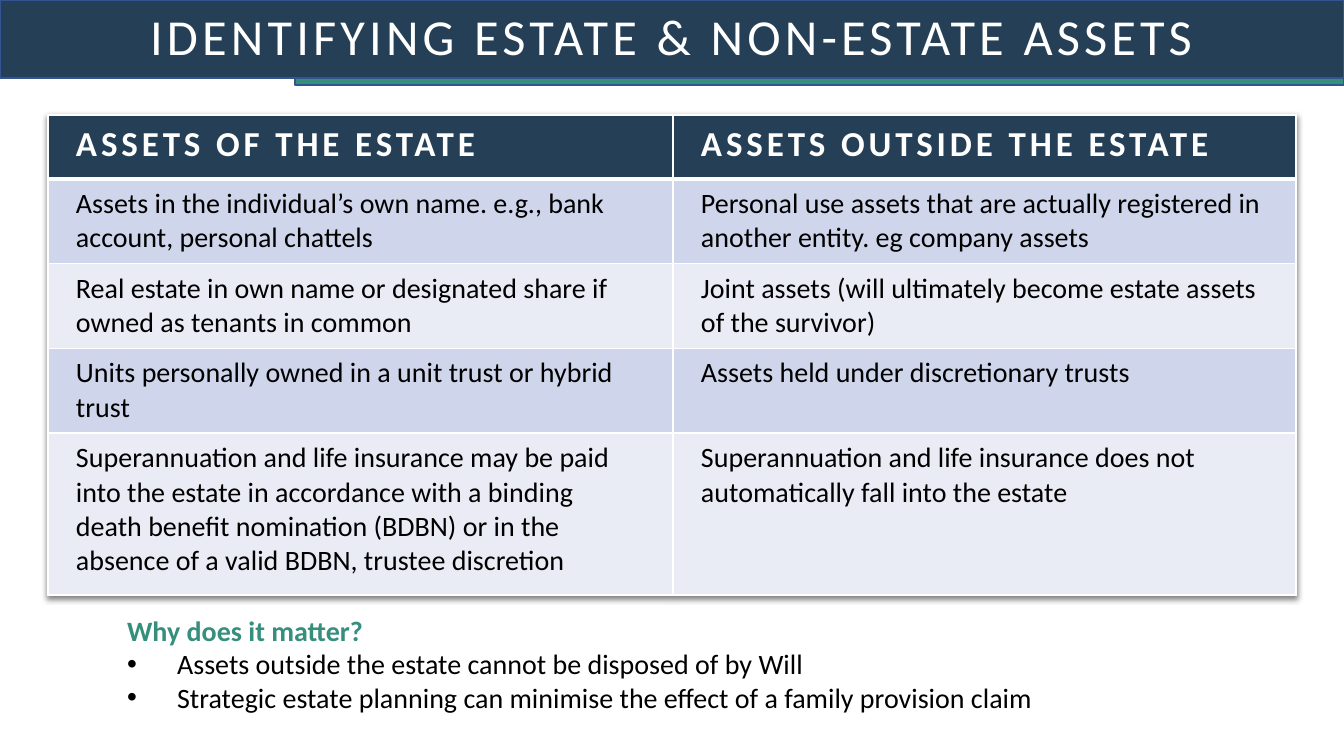
"""Build the slide on estate and non-estate assets."""
from lxml.etree import SubElement
from pptx import Presentation
from pptx.dml.color import RGBColor
from pptx.enum.shapes import MSO_SHAPE as Shape
from pptx.enum.text import MSO_ANCHOR as Anchor, MSO_AUTO_SIZE as AutoSize, PP_ALIGN as Align
from pptx.oxml import parse_xml
from pptx.oxml.ns import nsdecls, qn
from pptx.util import Pt

EMU_PER_PX = 914400 / 100.8
NAVY, GREEN, BLUE = "254056", "368E7D", "325491"
WHITE, BLACK = "FFFFFF", "000000"
BANDS = ("CFD5EA", "E9EBF5")
COLUMNS = (625, 623)
ROWS = (64, 84, 84, 85, 162)
ASSETS = (
    ("ASSETS OF THE ESTATE", "ASSETS OUTSIDE THE ESTATE"),
    ("Assets in the individual’s own name. e.g., bank account, personal chattels",
     "Personal use assets that are actually registered in another entity. eg company assets"),
    ("Real estate in own name or designated share if owned as tenants in common",
     "Joint assets (will ultimately become estate assets of the survivor)"),
    ("Units personally owned in a unit trust or hybrid trust",
     "Assets held under discretionary trusts"),
    ("Superannuation and life insurance may be paid into the estate in accordance with a "
     "binding death benefit nomination (BDBN) or in the absence of a valid BDBN, trustee discretion",
     "Superannuation and life insurance does not automatically fall into the estate"),
)
REASONS = (
    "Assets outside the estate cannot be disposed of by Will",
    "Strategic estate planning can minimise the effect of a family provision claim",
)


def px(length):
    """Turn pixels into EMU."""
    return round(length * EMU_PER_PX)


def color(value):
    """Turn a hex string into a colour."""
    return RGBColor.from_string(value)


def set_format(target, values):
    """Set each attribute of the target from a dict."""
    for name, value in values.items():
        setattr(target, name, value)


def place(shape, left, top, width, height):
    """Move and size a shape in pixels."""
    set_format(shape, {"left": px(left), "top": px(top),
                       "width": px(width), "height": px(height)})


def write(para, text, size, ink, bold=False, tracking=0):
    """Add one formatted run to a paragraph."""
    span = para.add_run()
    span.text = text
    set_format(span.font, {"name": "Calibri", "size": Pt(size), "bold": bold})
    span.font.color.rgb = color(ink)
    span.font._element.set("spc", str(round(tracking * 100)))


def add_bar(page, left, top, width, height, fill):
    """Add an outlined bar behind the placeholders."""
    bar = page.shapes.add_shape(Shape.RECTANGLE, px(left), px(top), px(width), px(height))
    bar.shadow.inherit = False
    bar.fill.solid()
    bar.fill.fore_color.rgb = color(fill)
    bar.line.color.rgb = color(BLUE)
    bar.line.width = Pt(1)
    page.shapes._spTree.insert(2, bar._element)


def fill_title(title):
    """Place and write the slide title."""
    place(title, 0, 0, 1344, 78)
    set_format(title.text_frame, {"vertical_anchor": Anchor.MIDDLE, "word_wrap": True,
                                  "auto_size": AutoSize.NONE})
    para = title.text_frame.paragraphs[0]
    set_format(para, {"alignment": Align.CENTER, "line_spacing": 0.9})
    write(para, "IDENTIFYING ESTATE & NON-ESTATE ASSETS", 36, WHITE, tracking=3)


def fill_reasons(body):
    """Write the heading and the bullets under the table."""
    place(body, 117, 608, 1159, 112)
    frame = body.text_frame
    set_format(frame, {"auto_size": AutoSize.NONE, "word_wrap": True})
    for index, text in enumerate(("Why does it matter?",) + REASONS):
        para = frame.add_paragraph() if index else frame.paragraphs[0]
        set_format(para, {"space_before": Pt(0), "space_after": Pt(0), "line_spacing": 1.0})
        indent = px(50) if index else 0
        props = para._p.get_or_add_pPr()
        props.set("marL", str(indent))
        props.set("indent", str(-indent))
        if index:
            SubElement(props, qn("a:buFont"), typeface="Arial")
            SubElement(props, qn("a:buChar"), char="•")
        else:
            SubElement(props, qn("a:buNone"))
        write(para, text, 20, BLACK if index else GREEN, bold=not index)


def format_cell(cell, text, row):
    """Write one cell with its borders and fill."""
    set_format(cell, {"margin_left": px(28), "margin_right": px(31),
                      "margin_top": px(8), "margin_bottom": px(8),
                      "vertical_anchor": Anchor.TOP})
    props = cell._tc.get_or_add_tcPr()
    for side in "LRTB":
        thick = (row == 0 and side == "B") or (row == 1 and side == "T")
        edge = SubElement(props, qn(f"a:ln{side}"), w=str(Pt(3 if thick else 1)))
        SubElement(SubElement(edge, qn("a:solidFill")), qn("a:srgbClr"), val=WHITE)
    cell.fill.solid()
    cell.fill.fore_color.rgb = color(BANDS[(row - 1) % 2] if row else NAVY)
    para = cell.text_frame.paragraphs[0]
    if row:
        write(para, text, 20, BLACK)
    else:
        write(para, text, 25, WHITE, bold=True, tracking=2.8)


def add_assets(page):
    """Add the table of assets with a soft shadow."""
    frame = page.shapes.add_table(len(ROWS), len(COLUMNS), px(48), px(115),
                                  px(sum(COLUMNS)), px(sum(ROWS)))
    table = frame.table
    for column, width in zip(table.columns, COLUMNS):
        column.width = px(width)
    for index, (row, height) in enumerate(zip(table.rows, ROWS)):
        row.height = px(height)
        for cell, text in zip(row.cells, ASSETS[index]):
            format_cell(cell, text, index)
    table._tbl.tblPr.insert(0, parse_xml(
        f'<a:effectLst {nsdecls("a")}><a:outerShdw blurRad="50800" dist="25400" dir="5400000">'
        f'<a:srgbClr val="{BLACK}"><a:alpha val="50000"/></a:srgbClr></a:outerShdw></a:effectLst>'))


def main():
    """Build and save the deck."""
    deck = Presentation()
    set_format(deck, {"slide_width": px(1344), "slide_height": px(756)})
    page = deck.slides.add_slide(deck.slide_layouts[1])
    add_bar(page, 295, 78, 1049, 7, GREEN)
    add_bar(page, 0, 0, 1344, 78, NAVY)
    fill_title(page.shapes.title)
    add_assets(page)
    fill_reasons(page.placeholders[1])
    deck.save("out.pptx")


if __name__ == "__main__":
    main()
